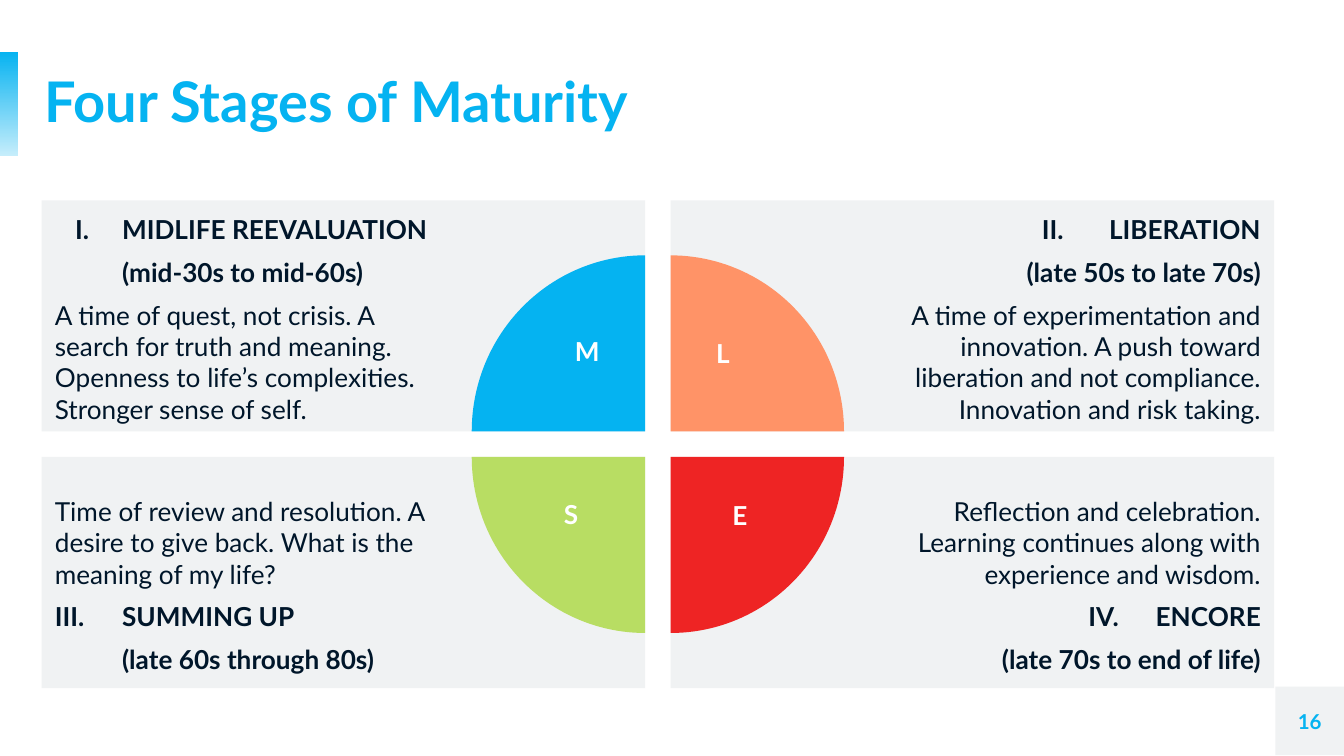
from dataclasses import dataclass

from lxml import etree
from pptx import Presentation
from pptx.dml.color import RGBColor
from pptx.enum.shapes import MSO_SHAPE
from pptx.enum.text import MSO_ANCHOR, PP_ALIGN
from pptx.oxml.ns import qn
from pptx.util import Inches, Pt

RECTANGLE, PIE = MSO_SHAPE.RECTANGLE, MSO_SHAPE.PIE
TOP, MIDDLE, BOTTOM = MSO_ANCHOR.TOP, MSO_ANCHOR.MIDDLE, MSO_ANCHOR.BOTTOM
LEFT, CENTER, RIGHT = PP_ALIGN.LEFT, PP_ALIGN.CENTER, PP_ALIGN.RIGHT

BLUE = RGBColor(0x05, 0xB3, 0xF1)
CORAL = RGBColor(0xFF, 0x93, 0x67)
RED = RGBColor(0xEE, 0x24, 0x24)
GREEN = RGBColor(0xB8, 0xDD, 0x63)
PALE_GRAY = RGBColor(0xF0, 0xF2, 0xF3)
NAVY = RGBColor(0x00, 0x16, 0x2A)
WHITE = RGBColor(0xFF, 0xFF, 0xFF)

FONT = "Lato"
SLIDE_W = Inches(10)
SLIDE_H = SLIDE_W * 9 // 16
CARD_X, CARD_Y = (0.31, 4.99), (1.49, 3.4)
CARD_W, CARD_H = 4.49, 1.72
PIE_W, PIE_H = 2.58, 2.62
HALF_TURN, THREE_QUARTER_TURN = 108, 162  # pie angles: 0.6 per degree


@dataclass
class Line:
    text: str
    bold: bool = True
    indent: float = 0
    numbered: bool = False


@dataclass
class Stage:
    column: int
    row: int
    color: RGBColor
    rotation: int
    letter: str
    letter_box: tuple
    lines: list


STAGES = [
    Stage(0, 0, BLUE, 0, "M", (4.12, 2.45, 0.5, 0.47), [
        Line("MIDLIFE REEVALUATION", indent=0.5, numbered=True),
        Line("(mid-30s to mid-60s)", indent=0.5),
        Line("A time of quest, not crisis. A search for truth and meaning. "
             "Openness to life’s complexities. Stronger sense of self.", bold=False),
    ]),
    Stage(1, 0, CORAL, 90, "L", (5.23, 2.46, 0.3, 0.47), [
        Line("II.\tLIBERATION"),
        Line("(late 50s to late 70s)"),
        Line("A time of experimentation and innovation. A push toward liberation "
             "and not compliance. Innovation and risk taking.", bold=False),
    ]),
    Stage(1, 1, RED, 180, "E", (5.35, 3.67, 0.31, 0.47), [
        Line("Reflection and celebration. Learning continues along with "
             "experience and wisdom.", bold=False),
        Line("IV.\tENCORE"),
        Line("(late 70s to end of life)"),
    ]),
    Stage(0, 1, GREEN, 270, "S", (4.08, 3.66, 0.34, 0.49), [
        Line("Time of review and resolution. A desire to give back. "
             "What is the meaning of my life?", bold=False),
        Line("III.\tSUMMING UP"),
        Line("(late 60s through 80s)", indent=0.5),
    ]),
]


def add_run(paragraph, text, size, color, bold=True):
    run = paragraph.add_run()
    run.text = text
    run.font.name = FONT
    run.font.size = Pt(size)
    run.font.bold = bold
    run.font.color.rgb = color


def set_frame(frame, anchor, left=0.0, top=0.0, right=0.0, bottom=0.0):
    frame.word_wrap = True
    frame.vertical_anchor = anchor
    frame.margin_left, frame.margin_top = Inches(left), Inches(top)
    frame.margin_right, frame.margin_bottom = Inches(right), Inches(bottom)


def add_block(slide, preset, left, top, width, height, color=None):
    block = slide.shapes.add_shape(
        preset, Inches(left), Inches(top), Inches(width), Inches(height))
    block.shadow.inherit = False
    block.line.fill.background()
    if color is not None:
        block.fill.solid()
        block.fill.fore_color.rgb = color
    return block


def add_accent_bar(slide):
    """Add the left edge bar that fades out towards its foot."""
    bar = add_block(slide, RECTANGLE, -0.01, 0.39, 0.14, 0.77)
    bar.fill.gradient()
    bar.fill.gradient_angle = 90
    for stop in bar.fill.gradient_stops:
        stop.color.rgb = BLUE
    foot_color = bar._element.spPr.find(".//" + qn("a:srgbClr"))
    etree.SubElement(foot_color, qn("a:alpha"), val="22000")


def add_title(slide, text):
    title = slide.shapes.title
    title.left, title.top = Inches(0.33), Inches(0.39)
    title.width, title.height = Inches(9.27), Inches(0.77)
    set_frame(title.text_frame, MIDDLE)
    paragraph = title.text_frame.paragraphs[0]
    paragraph.alignment = LEFT
    paragraph.line_spacing = 0.9
    add_run(paragraph, text, 30, BLUE)


def add_label(slide, text, box, size, color):
    label = slide.shapes.add_textbox(*map(Inches, box))
    label.text_frame.word_wrap = True
    paragraph = label.text_frame.paragraphs[0]
    paragraph.alignment = CENTER
    add_run(paragraph, text, size, color)
    return label


def indent_paragraph(paragraph, line):
    """Set the indent, the hanging Roman numeral and the tab stop of a line."""
    properties = paragraph._p.get_or_add_pPr()
    properties.set("marL", str(Inches(line.indent)))
    properties.set("indent", str(Inches(-0.35 if line.numbered else 0)))
    if line.numbered:
        bullet_color = etree.SubElement(properties, qn("a:buClr"))
        etree.SubElement(bullet_color, qn("a:srgbClr"), val=str(NAVY))
        etree.SubElement(properties, qn("a:buAutoNum"), type="romanUcPeriod")
    if "\t" in line.text:
        tabs = etree.SubElement(properties, qn("a:tabLst"))
        etree.SubElement(tabs, qn("a:tab"), pos=str(Inches(1)), algn="l")


def add_card(slide, stage):
    card = add_block(slide, RECTANGLE, CARD_X[stage.column], CARD_Y[stage.row],
                     CARD_W, CARD_H, PALE_GRAY)
    on_left = stage.column == 0
    frame = card.text_frame
    set_frame(frame, TOP if stage.row == 0 else BOTTOM,
              left=0.1 if on_left else 1.5, top=0.1,
              right=1.5 if on_left else 0.1, bottom=0.1)
    for index, line in enumerate(stage.lines):
        paragraph = frame.add_paragraph() if index else frame.paragraphs[0]
        indent_paragraph(paragraph, line)
        paragraph.alignment = LEFT if on_left else RIGHT
        paragraph.space_before = Pt(6 if index else 0)
        add_run(paragraph, line.text, 14, NAVY, line.bold)
    paragraph.space_after = Pt(6)


def add_quarter(slide, stage):
    """Add a quarter circle centred on the inner corner of the stage's card."""
    center_x = CARD_X[stage.column] + (CARD_W if stage.column == 0 else 0)
    center_y = CARD_Y[stage.row] + (CARD_H if stage.row == 0 else 0)
    width, height = (PIE_H, PIE_W) if stage.rotation % 180 else (PIE_W, PIE_H)
    quarter = add_block(slide, PIE, center_x - width / 2, center_y - height / 2,
                        width, height, stage.color)
    quarter.adjustments[0] = HALF_TURN
    quarter.adjustments[1] = THREE_QUARTER_TURN
    quarter.rotation = stage.rotation


def add_page_number(slide, number):
    corner = (9.49, 5.11, 0.51, 0.51)
    add_block(slide, RECTANGLE, *corner, PALE_GRAY)
    label = add_label(slide, number, corner, 11, BLUE)
    set_frame(label.text_frame, MIDDLE)


def main():
    presentation = Presentation()
    presentation.slide_width, presentation.slide_height = SLIDE_W, SLIDE_H
    slide = presentation.slides.add_slide(presentation.slide_layouts[5])
    add_accent_bar(slide)
    add_title(slide, "Four Stages of Maturity")
    for stage in STAGES:
        add_card(slide, stage)
    for stage in STAGES:
        add_quarter(slide, stage)
    for stage in STAGES:
        add_label(slide, stage.letter, stage.letter_box, 14, WHITE)
    add_page_number(slide, "16")
    presentation.save("out.pptx")


if __name__ == "__main__":
    main()
